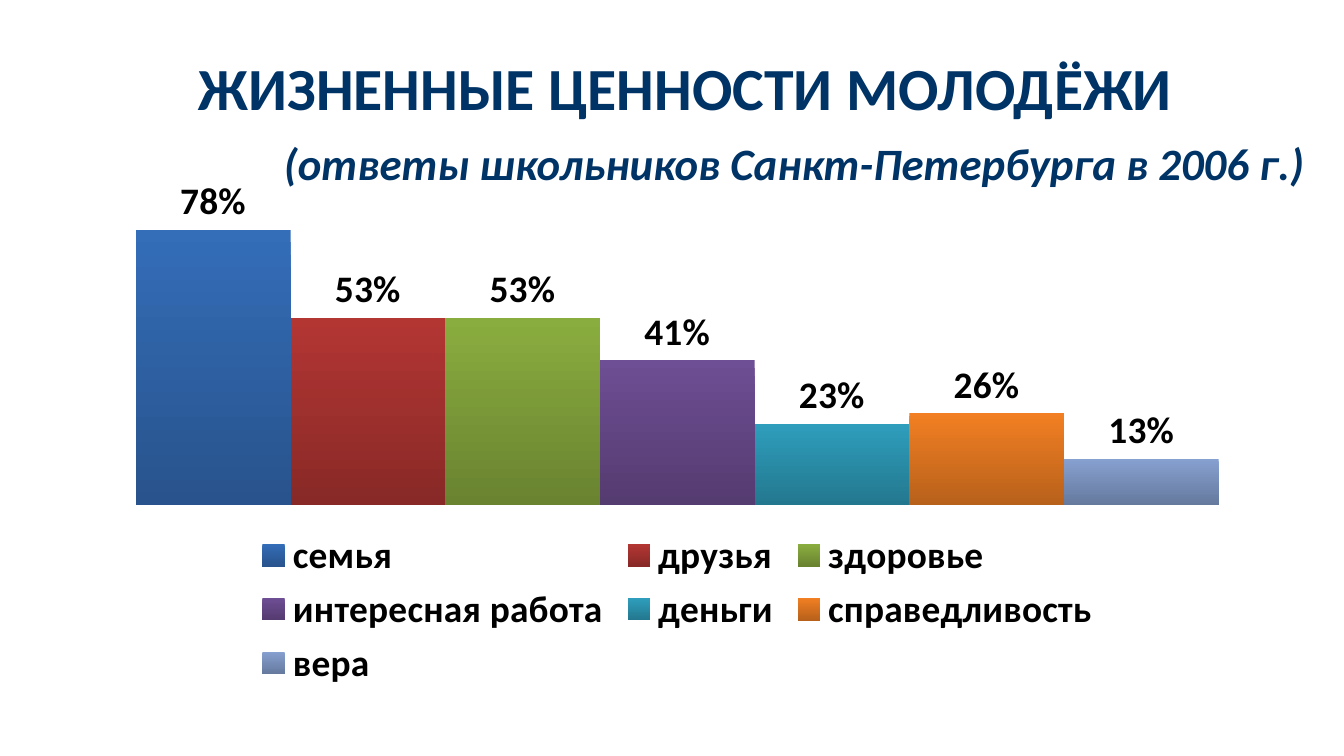
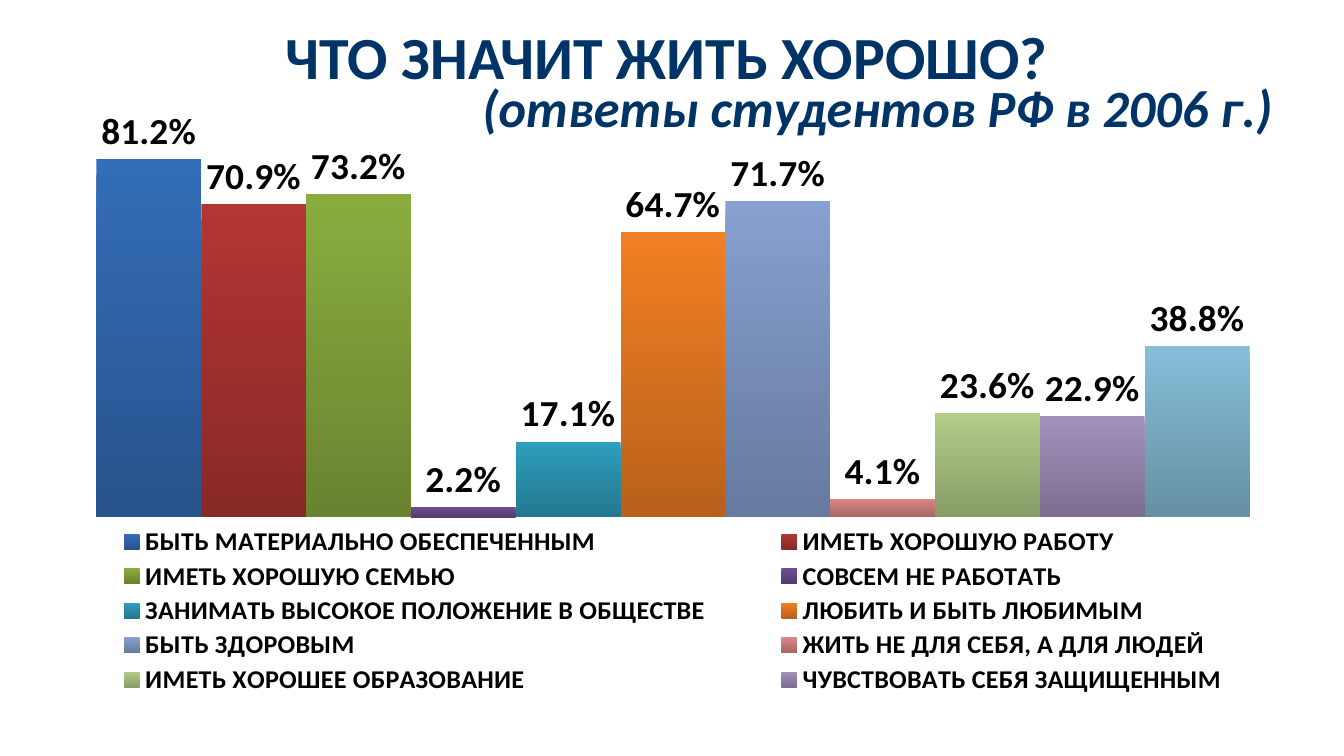
import pptx
import pptx.chart.data
import pptx.dml.color
import pptx.enum.chart
import pptx.enum.text
import pptx.oxml
import pptx.oxml.ns
import pptx.util
from dataclasses import dataclass

Cm = pptx.util.Cm
Pt = pptx.util.Pt
Align = pptx.enum.text.PP_ALIGN


@dataclass(frozen=True)
class Theme:
    font: str = "Calibri"
    heading: str = "003366"
    chart_text: str = "000000"
    title_size: int = 32
    label_size: int = 20
    shade: float = 0.76
    bars: tuple = ("346DB8", "B33633", "8AAD3F", "6E4E94", "2E9EBC", "F27F23",
                   "86A0D0", "D98785", "B3CD88", "A391BD", "86BED8")


theme = Theme()


def write_text(shape, text, *, box, size, align=Align.CENTER, italic=False, wrap=True):
    """Place a shape and fill it with one line of bold heading text."""
    shape.left, shape.top, shape.width, shape.height = [Cm(length) for length in box]
    frame = shape.text_frame
    frame.text = text
    frame.word_wrap = wrap
    frame.auto_size = pptx.enum.text.MSO_AUTO_SIZE.SHAPE_TO_FIT_TEXT
    frame.vertical_anchor = pptx.enum.text.MSO_ANCHOR.TOP
    paragraph = frame.paragraphs[0]
    paragraph.alignment = align
    paragraph.space_before = Pt(0)
    font = paragraph.runs[0].font
    font.name, font.size, font.bold, font.italic = theme.font, Pt(size), True, italic
    font.color.rgb = pptx.dml.color.RGBColor.from_string(theme.heading)


def set_layout(element, position, inner=False):
    """Give a plot area or legend a fixed place, as fractions of the chart."""
    for old in element.findall(pptx.oxml.ns.qn("c:layout")):
        element.remove(old)
    target = '<c:layoutTarget val="inner"/>' if inner else ""
    modes = '<c:xMode val="edge"/><c:yMode val="edge"/>'
    values = "".join(f'<c:{key} val="{value}"/>' for key, value in zip("xywh", position))
    layout = pptx.oxml.parse_xml(
        f'<c:layout {pptx.oxml.ns.nsdecls("c")}><c:manualLayout>'
        f'{target}{modes}{values}</c:manualLayout></c:layout>')
    # The layout follows the legend position, and comes first in a plot area
    element.insert(0 if inner else 1, layout)


# Content of the two surveys; an answer without a name has no legend entry
surveys = [
    dict(
        title="ЖИЗНЕННЫЕ ЦЕННОСТИ МОЛОДЁЖИ",
        title_box=(3.5, 0.84, 19.2, 1.62), title_align=Align.LEFT,
        subtitle="(ответы школьников Санкт-Петербурга в 2006 г.)",
        subtitle_box=(5.1, 2.44, 19.82, 1.28), subtitle_size=24,
        chart_box=(1, 3.35, 23.6, 9.75), number_format="0%", legend_size=20,
        plot_layout=None, legend_layout=None,
        answers={
            "семья": 0.78,
            "друзья": 0.53,
            "здоровье": 0.53,
            "интересная работа": 0.41,
            "деньги": 0.23,
            "справедливость": 0.26,
            "вера": 0.13,
        },
    ),
    dict(
        title="ЧТО ЗНАЧИТ ЖИТЬ ХОРОШО?",
        title_box=(0.7, 0.25, 23.8, 1.62), title_align=Align.CENTER,
        subtitle="(ответы студентов РФ в 2006 г.)",
        subtitle_box=(8.58, 1.3, 16, 1.45), subtitle_size=28,
        chart_box=(0.6, 2.05, 24, 11.25), number_format="0.0%", legend_size=14,
        plot_layout=(0.02, 0, 0.97, 0.68), legend_layout=(0.02, 0.69, 0.97, 0.3),
        answers={
            "БЫТЬ МАТЕРИАЛЬНО ОБЕСПЕЧЕННЫМ": 0.812,
            "ИМЕТЬ ХОРОШУЮ РАБОТУ": 0.709,
            "ИМЕТЬ ХОРОШУЮ СЕМЬЮ": 0.732,
            "СОВСЕМ НЕ РАБОТАТЬ": 0.022,
            "ЗАНИМАТЬ ВЫСОКОЕ ПОЛОЖЕНИЕ В ОБЩЕСТВЕ": 0.171,
            "ЛЮБИТЬ И БЫТЬ ЛЮБИМЫМ": 0.647,
            "БЫТЬ ЗДОРОВЫМ": 0.717,
            "ЖИТЬ НЕ ДЛЯ СЕБЯ, А ДЛЯ ЛЮДЕЙ": 0.041,
            "ИМЕТЬ ХОРОШЕЕ ОБРАЗОВАНИЕ": 0.236,
            "ЧУВСТВОВАТЬ СЕБЯ ЗАЩИЩЕННЫМ": 0.229,
            "": 0.388,
        },
    ),
]

presentation = pptx.Presentation()
presentation.slide_width, presentation.slide_height = Cm(25.4), Cm(14.28)
title_only = presentation.slide_layouts[5]

for survey in surveys:
    slide = presentation.slides.add_slide(title_only)

    # Title
    write_text(slide.shapes.title, survey["title"], box=survey["title_box"],
               size=theme.title_size, align=survey["title_align"])

    # Chart: one series for each answer
    chart_data = pptx.chart.data.CategoryChartData(number_format=survey["number_format"])
    chart_data.categories = ["1"]
    for answer, share in survey["answers"].items():
        chart_data.add_series(answer, [share])
    chart = slide.shapes.add_chart(
        pptx.enum.chart.XL_CHART_TYPE.COLUMN_CLUSTERED,
        *[Cm(length) for length in survey["chart_box"]], chart_data).chart
    chart.has_title = False
    chart.font.name, chart.font.size = theme.font, Pt(10)
    chart.font.color.rgb = pptx.dml.color.RGBColor.from_string(theme.chart_text)
    chart.category_axis.visible = False
    chart.value_axis.visible = False
    chart.value_axis.has_major_gridlines = False
    chart.value_axis.tick_labels.number_format = survey["number_format"]
    chart.value_axis.tick_labels.number_format_is_linked = False

    # Columns, each shaded darker towards its foot
    plot = chart.plots[0]
    plot.gap_width, plot.overlap, plot.vary_by_categories = 75, 0, False
    for series, color in zip(plot.series, theme.bars):
        top = pptx.dml.color.RGBColor.from_string(color)
        foot = pptx.dml.color.RGBColor(*[round(channel * theme.shade) for channel in top])
        fill = series.format.fill
        fill.gradient()
        fill.gradient_angle = 270
        for stop, stop_color in zip(fill.gradient_stops, (top, foot)):
            stop.color.rgb = stop_color
        labels = series.data_labels
        labels.show_value = True
        labels.number_format = survey["number_format"]
        labels.number_format_is_linked = False
        labels.position = pptx.enum.chart.XL_LABEL_POSITION.OUTSIDE_END
        labels.font.size, labels.font.bold = Pt(theme.label_size), True

    # Legend
    chart.has_legend = True
    legend = chart.legend
    legend.position = pptx.enum.chart.XL_LEGEND_POSITION.BOTTOM
    legend.include_in_layout = False
    legend.font.size, legend.font.bold = Pt(survey["legend_size"]), True
    legend_element = chart.element.find(".//" + pptx.oxml.ns.qn("c:legend"))
    if survey["plot_layout"]:
        plot_area = chart.element.find(".//" + pptx.oxml.ns.qn("c:plotArea"))
        set_layout(plot_area, survey["plot_layout"], inner=True)
        set_layout(legend_element, survey["legend_layout"])
    for index, answer in enumerate(survey["answers"]):
        if not answer:
            legend_element.insert(1, pptx.oxml.parse_xml(
                f'<c:legendEntry {pptx.oxml.ns.nsdecls("c")}>'
                f'<c:idx val="{index}"/><c:delete val="1"/></c:legendEntry>'))

    # Subtitle, in front of the chart
    subtitle = slide.shapes.add_textbox(0, 0, 0, 0)
    write_text(subtitle, survey["subtitle"], box=survey["subtitle_box"],
               size=survey["subtitle_size"], italic=True, wrap=False)

presentation.save("out.pptx")
